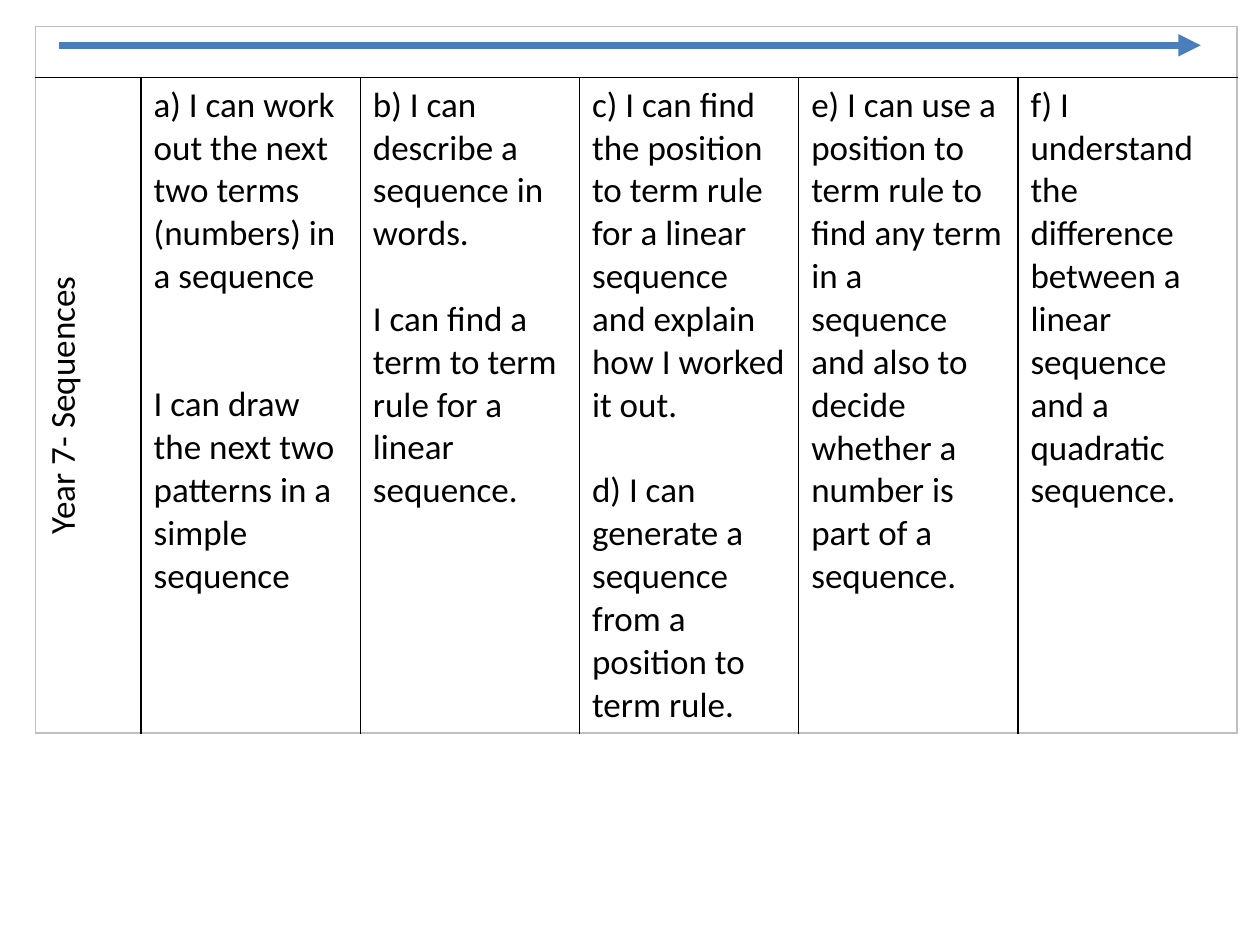
import pptx
import pptx.util
import pptx.dml.color
import pptx.enum.shapes
import pptx.enum.text
import pptx.oxml
import pptx.oxml.ns
from lxml import etree

Inches, Pt = pptx.util.Inches, pptx.util.Pt
HUES = {"text": "000000", "grid": "000000", "edge": "BFBFBF", "arrow": "4B7EBC"}
LINE = 24.4  # height of one text line, in points

TOPIC = "Year 7- Sequences"
# Each goal: (blank lines above, text)
GOALS = [
    [(0, "a) I can work out the next two terms (numbers) in a sequence"),
     (2, "I can draw the next two patterns in a simple sequence")],
    [(0, "b) I can describe a sequence in words."),
     (1, "I can find a term to term rule for a linear sequence.")],
    [(0, "c) I can find the position to term rule for a linear sequence "
         "and explain how I worked it out."),
     (1, "d) I can generate a sequence from a position to term rule.")],
    [(0, "e) I can use a position to term rule to find any term in a sequence "
         "and also to decide whether a number is part of a sequence.")],
    [(0, "f) I understand the difference between a linear sequence "
         "and a quadratic sequence.")],
]
WIDTHS = [0.84] + [1.74] * len(GOALS)
HEIGHTS = [0.4, 5.2]
FONT = {"name": "Calibri", "size": Pt(20)}


def rgb(name):
    return pptx.dml.color.RGBColor.from_string(HUES[name])


def write(cell, goals):
    frame = cell.text_frame
    for i, (gap, text) in enumerate(goals):
        para = frame.add_paragraph() if i else frame.paragraphs[0]
        para.space_before = Pt(gap * LINE)
        run = para.add_run()
        run.text = text
        for key, value in FONT.items():
            setattr(run.font, key, value)
        run.font.color.rgb = rgb("text")


def border(cell, sides):
    """Draw the sides given as (letter, colour name), in L, R, T, B order."""
    props = cell._tc.get_or_add_tcPr()
    for i, (side, hue) in enumerate(sides):
        props.insert(i, pptx.oxml.parse_xml(
            f'<a:ln{side} {pptx.oxml.ns.nsdecls("a")} w="{Pt(1)}"><a:solidFill>'
            f'<a:srgbClr val="{HUES[hue]}"/></a:solidFill></a:ln{side}>'))


def add_grid(slide):
    cols = len(WIDTHS)
    grid = slide.shapes.add_table(
        2, cols, Inches(0.28), Inches(0.21),
        Inches(sum(WIDTHS)), Inches(sum(HEIGHTS))).table
    grid.first_row = grid.horz_banding = False
    for col, width in zip(grid.columns, WIDTHS):
        col.width = Inches(width)
    for row, height in zip(grid.rows, HEIGHTS):
        row.height = Inches(height)
    grid.cell(0, 0).merge(grid.cell(0, cols - 1))

    for c in range(cols):
        left = "grid" if c else "edge"
        right = "grid" if c < cols - 1 else "edge"
        top, low = grid.cell(0, c), grid.cell(1, c)
        for cell in (top, low):
            cell.fill.background()
        ends = [("L", "edge"), ("R", "edge")] if c in (0, cols - 1) else []
        border(top, ends + [("T", "edge"), ("B", "grid")])
        border(low, [("L", left), ("R", right), ("T", "grid"), ("B", "edge")])
        write(low, GOALS[c - 1] if c else [(0, TOPIC)])

    head = grid.cell(1, 0)
    head._tc.get_or_add_tcPr().set("vert", "vert270")
    head.text_frame.paragraphs[0].alignment = pptx.enum.text.PP_ALIGN.CENTER


def add_arrow(slide):
    y = Inches(0.36)
    arrow = slide.shapes.add_connector(
        pptx.enum.shapes.MSO_CONNECTOR.STRAIGHT, Inches(0.47), y, Inches(9.53), y)
    arrow.line.width = Pt(4.25)
    arrow.line.color.rgb = rgb("arrow")
    qn = pptx.oxml.ns.qn
    etree.SubElement(arrow.line._get_or_add_ln(), qn("a:tailEnd"), type="triangle")
    etree.SubElement(arrow._element.spPr, qn("a:effectLst"))


def main():
    deck = pptx.Presentation()
    deck.slide_width, deck.slide_height = Inches(10), Inches(7.5)
    slide = deck.slides.add_slide(deck.slide_layouts[6])
    add_grid(slide)
    add_arrow(slide)
    deck.save("out.pptx")


if __name__ == "__main__":
    main()
